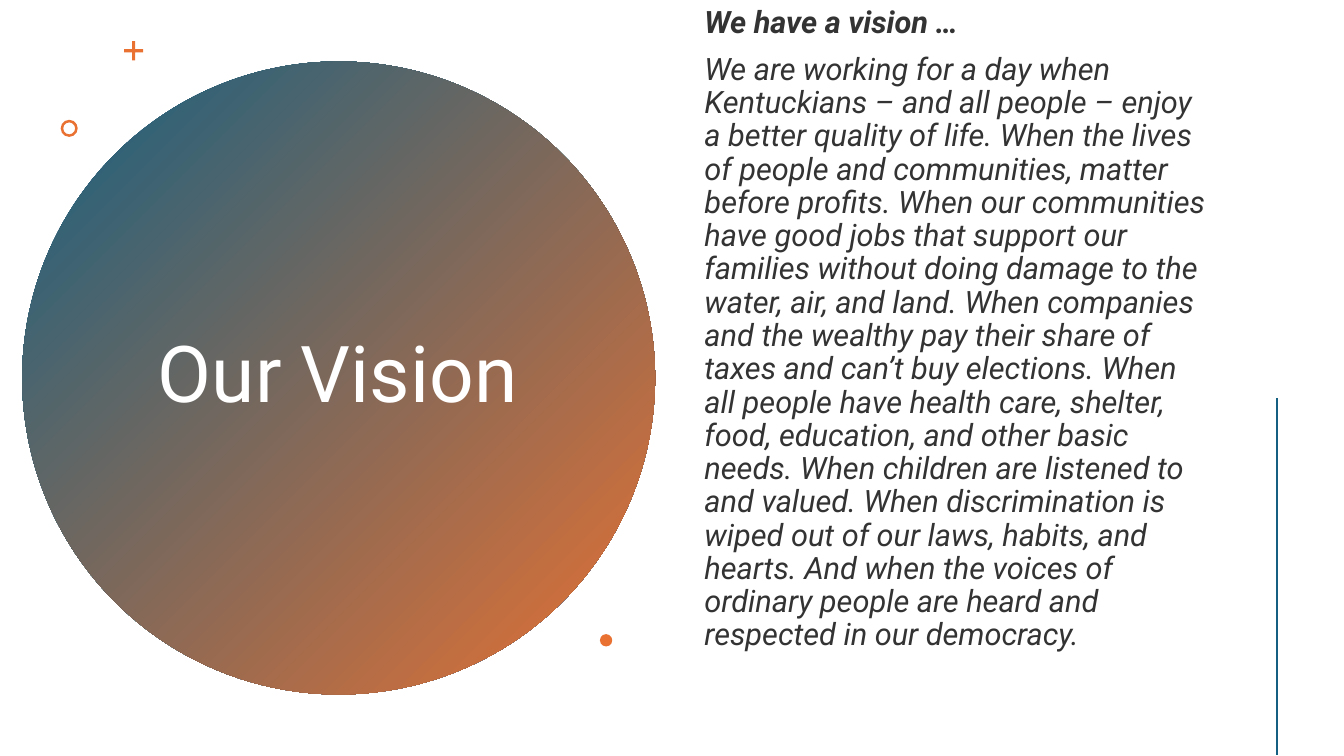
import pptx
import pptx.util
import pptx.dml.color
import pptx.enum.shapes
import pptx.enum.text
import pptx.oxml.ns
from lxml import etree

Cm, Pt = pptx.util.Cm, pptx.util.Pt
SHAPE = pptx.enum.shapes.MSO_SHAPE
ALIGN = pptx.enum.text.PP_ALIGN

FONT = "Roboto"
BLUE, ORANGE, WHITE, INK = "156082", "E97132", "FFFFFF", "333333"

TITLE = "Our Vision"
HEAD = "We have a vision …"
VISION = [
    "We are working for a day when Kentuckians – and all people – enjoy a better quality of life.",
    "When the lives of people and communities, matter before profits.",
    "When our communities have good jobs that support our families without doing damage to the water, air, and land.",
    "When companies and the wealthy pay their share of taxes and can’t buy elections.",
    "When all people have health care, shelter, food, education, and other basic needs.",
    "When children are listened to and valued.",
    "When discrimination is wiped out of our laws, habits, and hearts.",
    "And when the voices of ordinary people are heard and respected in our democracy.",
]

# left, top, width, height in cm
TITLE_BOX = (3.45, 3.58, 10.13, 11.86)
BODY_BOX = (17.5, 1.45, 13.26, 16.2)
DISC = (0.56, 1.55, 15.95, 15.95)
RULE = (32.18, 10.03, 32.18, 19.03)

# shape, left, top, size in cm, adjustment
MARKS = [
    (SHAPE.CROSS, 3.13, 1.04, 0.48, 0.42),
    (SHAPE.DONUT, 1.53, 3.02, 0.43, 0.15),
    (SHAPE.OVAL, 15.12, 15.98, 0.31, None),
]


def paint(code):
    return pptx.dml.color.RGBColor.from_string(code)


def place(shape, box):
    shape.left, shape.top, shape.width, shape.height = map(Cm, box)


def draw(slide, kind, box):
    """Add a preset shape without line or shadow."""
    shape = slide.shapes.add_shape(kind, *map(Cm, box))
    shape.shadow.inherit = False
    shape.line.fill.background()
    return shape


def setup(holder, box):
    """Move a placeholder and return its text frame, centred and fixed in size."""
    place(holder, box)
    frame = holder.text_frame
    frame.word_wrap = True
    frame.auto_size = pptx.enum.text.MSO_AUTO_SIZE.NONE
    frame.vertical_anchor = pptx.enum.text.MSO_ANCHOR.MIDDLE
    return frame


def write(para, text, size, color, align, bold=False, italic=False):
    para.alignment = align
    para.line_spacing = 0.9
    run = para.add_run()
    run.text = text
    font = run.font
    font.name, font.size = FONT, Pt(size)
    font.bold, font.italic = bold, italic
    font.color.rgb = paint(color)


def main():
    deck = pptx.Presentation()
    deck.slide_width, deck.slide_height = Cm(33.87), Cm(19.05)
    slide = deck.slides.add_slide(deck.slide_layouts[1])
    title, body = slide.shapes.title, slide.placeholders[1]

    disc = draw(slide, SHAPE.OVAL, DISC)
    disc.fill.gradient()
    disc.fill.gradient_angle = 315
    for stop, code in zip(disc.fill.gradient_stops, (BLUE, ORANGE)):
        stop.color.rgb = paint(code)
    title.element.addprevious(disc.element)

    frame = setup(title, TITLE_BOX)
    write(frame.paragraphs[0], TITLE, 56, WHITE, ALIGN.CENTER)

    frame = setup(body, BODY_BOX)
    frame.margin_bottom = Cm(2.62)
    texts = [(HEAD, True), (" ".join(VISION), False)]
    for i, (text, bold) in enumerate(texts):
        para = frame.add_paragraph() if i else frame.paragraphs[0]
        write(para, text, 22, INK, ALIGN.LEFT, bold, True)
        para.space_before = Pt(10)
        props = para._p.get_or_add_pPr()
        props.set("marL", "0")
        props.set("indent", "0")
        etree.SubElement(props, pptx.oxml.ns.qn("a:buNone"))

    for kind, left, top, size, adjust in MARKS:
        mark = draw(slide, kind, (left, top, size, size))
        mark.fill.solid()
        mark.fill.fore_color.rgb = paint(ORANGE)
        if adjust is not None:
            mark.adjustments[0] = adjust

    rule = slide.shapes.add_connector(
        pptx.enum.shapes.MSO_CONNECTOR.STRAIGHT, *map(Cm, RULE))
    rule.line.color.rgb = paint(BLUE)
    rule.line.width = Pt(2)
    etree.SubElement(rule.element.spPr, pptx.oxml.ns.qn("a:effectLst"))

    deck.save("out.pptx")


if __name__ == "__main__":
    main()
